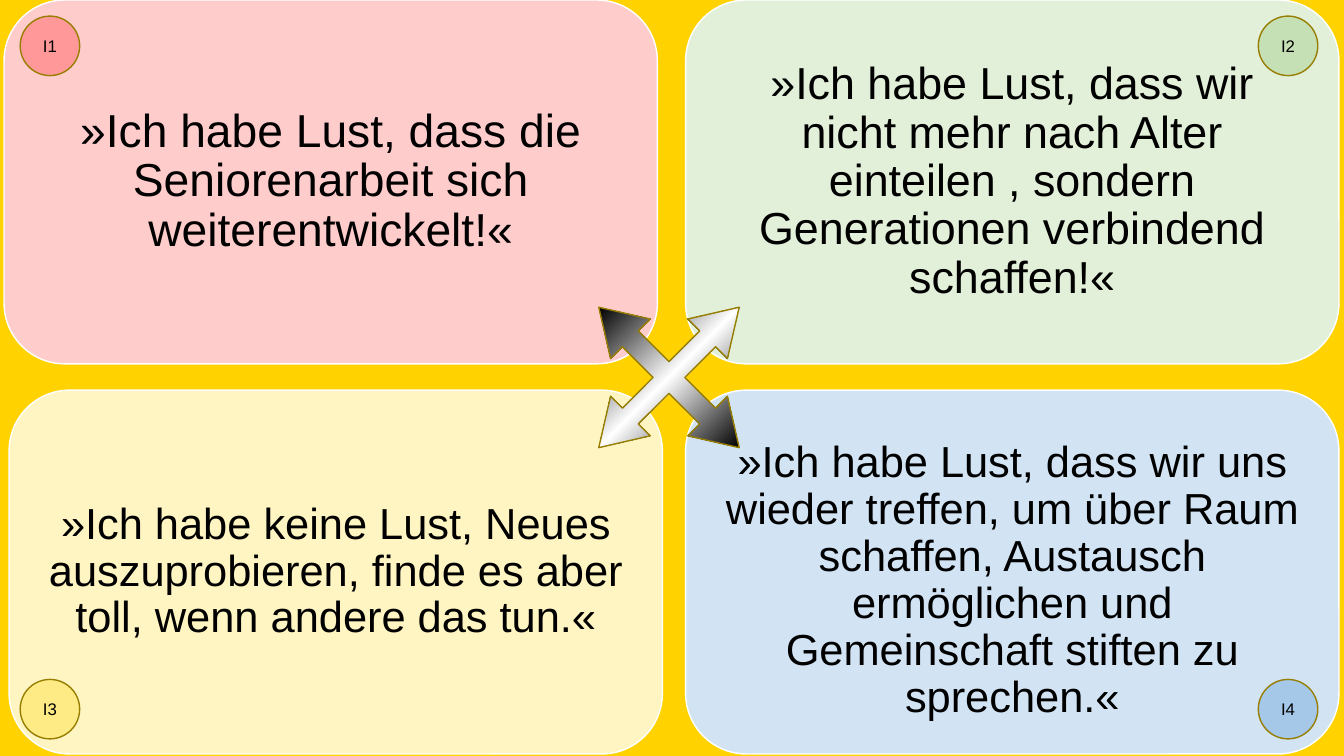
import pptx
import pptx.util
import pptx.dml.color
import pptx.enum.shapes
import pptx.enum.text
import pptx.oxml.ns
from lxml import etree

Inches, Pt = pptx.util.Inches, pptx.util.Pt
RGBColor = pptx.dml.color.RGBColor
MSO_SHAPE = pptx.enum.shapes.MSO_SHAPE

YELLOW = RGBColor(0xFF, 0xD2, 0x00)
WHITE = RGBColor(0xFF, 0xFF, 0xFF)
BLACK = RGBColor(0x00, 0x00, 0x00)
OLIVE = RGBColor(0x97, 0x7E, 0x00)
ROSE, RED = RGBColor(0xFF, 0xCC, 0xCC), RGBColor(0xFF, 0x99, 0x99)
MINT, GREEN = RGBColor(0xE2, 0xF0, 0xD9), RGBColor(0xC5, 0xE0, 0xB4)
CREAM, GOLD = RGBColor(0xFF, 0xF5, 0xC2), RGBColor(0xFF, 0xEB, 0x85)
SKY, BLUE = RGBColor(0xD2, 0xE4, 0xF4), RGBColor(0xA5, 0xC8, 0xE8)

QUOTES = [
    ("I1", "»Ich habe Lust, dass die Seniorenarbeit sich weiterentwickelt!«", 33, 0.04, 0, ROSE, RED),
    ("I2", "»Ich habe Lust, dass wir nicht mehr nach Alter einteilen , sondern Generationen "
           "verbindend schaffen!«", 32, 6.8, 0, MINT, GREEN),
    ("I3", "»Ich habe keine Lust, Neues auszuprobieren, finde es aber toll, wenn andere das tun.«",
     31, 0.09, 0, CREAM, GOLD),
    ("I4", "»Ich habe Lust, dass wir uns wieder treffen, um über Raum schaffen, Austausch ermöglichen "
           "und Gemeinschaft stiften zu sprechen.«", 31, 6.8, 0.09, SKY, BLUE),
]
CARD_W, CARD_H = 6.48, 3.61
CARD_TOPS = (0, 3.87)
CARD_INSET = 0.16
BADGE = 0.59
BADGE_LEFTS, BADGE_TOPS = (0.2, 12.48), (0.16, 6.74)
ARROW = (5.65, 2.76, 1.97, 1.97)
ARROW_ADJUSTMENTS = (0.113, 0.141, 0.225)
ARROW_STOPS = [(0, BLACK), (25, BLACK), (50, WHITE), (75, BLACK), (100, BLACK)]


def add_shape(s, kind, box, line):
    sp = s.shapes.add_shape(kind, *map(Inches, box))
    sp.shadow.inherit = False
    sp.line.color.rgb = line
    sp.line.width = Pt(1)
    return sp


def set_text(sp, text, size, inset, spacing, drop=0):
    tf = sp.text_frame
    frame = {
        "word_wrap": True,
        "vertical_anchor": pptx.enum.text.MSO_ANCHOR.MIDDLE,
        "margin_left": Inches(inset),
        "margin_right": Inches(inset),
        "margin_top": Inches(inset + drop),
        "margin_bottom": Inches(inset - drop),
    }
    for name, value in frame.items():
        setattr(tf, name, value)
    p = tf.paragraphs[0]
    p.alignment = pptx.enum.text.PP_ALIGN.CENTER
    p.line_spacing = spacing
    r = p.add_run()
    r.text = text
    for name, value in {"name": "Arial", "size": Pt(size)}.items():
        setattr(r.font, name, value)
    r.font.color.rgb = BLACK


def set_gradient(sp, stops):
    sp.fill.gradient()
    sp.fill.gradient_angle = 0
    qn = pptx.oxml.ns.qn
    gs_list = sp.element.spPr.find(qn("a:gradFill")).find(qn("a:gsLst"))
    for gs in list(gs_list):
        gs_list.remove(gs)
    for position, color in stops:
        gs = etree.SubElement(gs_list, qn("a:gs"), pos=str(position * 1000))
        etree.SubElement(gs, qn("a:srgbClr"), val=str(color))


def main():
    prs = pptx.Presentation()
    prs.slide_width, prs.slide_height = Inches(13.33), Inches(7.5)
    s = prs.slides.add_slide(prs.slide_layouts[6])
    s.background.fill.solid()
    s.background.fill.fore_color.rgb = YELLOW

    for i, (_, quote, size, left, drop, fill, _) in enumerate(QUOTES):
        card = add_shape(s, MSO_SHAPE.ROUNDED_RECTANGLE, (left, CARD_TOPS[i // 2], CARD_W, CARD_H), WHITE)
        card.fill.solid()
        card.fill.fore_color.rgb = fill
        set_text(card, quote, size, CARD_INSET, 0.9, drop)

    arrow = add_shape(s, MSO_SHAPE.QUAD_ARROW, ARROW, OLIVE)
    arrow.rotation = 45
    for i, value in enumerate(ARROW_ADJUSTMENTS):
        arrow.adjustments[i] = value
    set_gradient(arrow, ARROW_STOPS)

    for i, (label, *_, fill) in enumerate(QUOTES):
        badge = add_shape(s, MSO_SHAPE.OVAL, (BADGE_LEFTS[i % 2], BADGE_TOPS[i // 2], BADGE, BADGE), OLIVE)
        badge.fill.solid()
        badge.fill.fore_color.rgb = fill
        set_text(badge, label, 12, 0.05, 1.0)

    prs.save("out.pptx")


if __name__ == "__main__":
    main()
